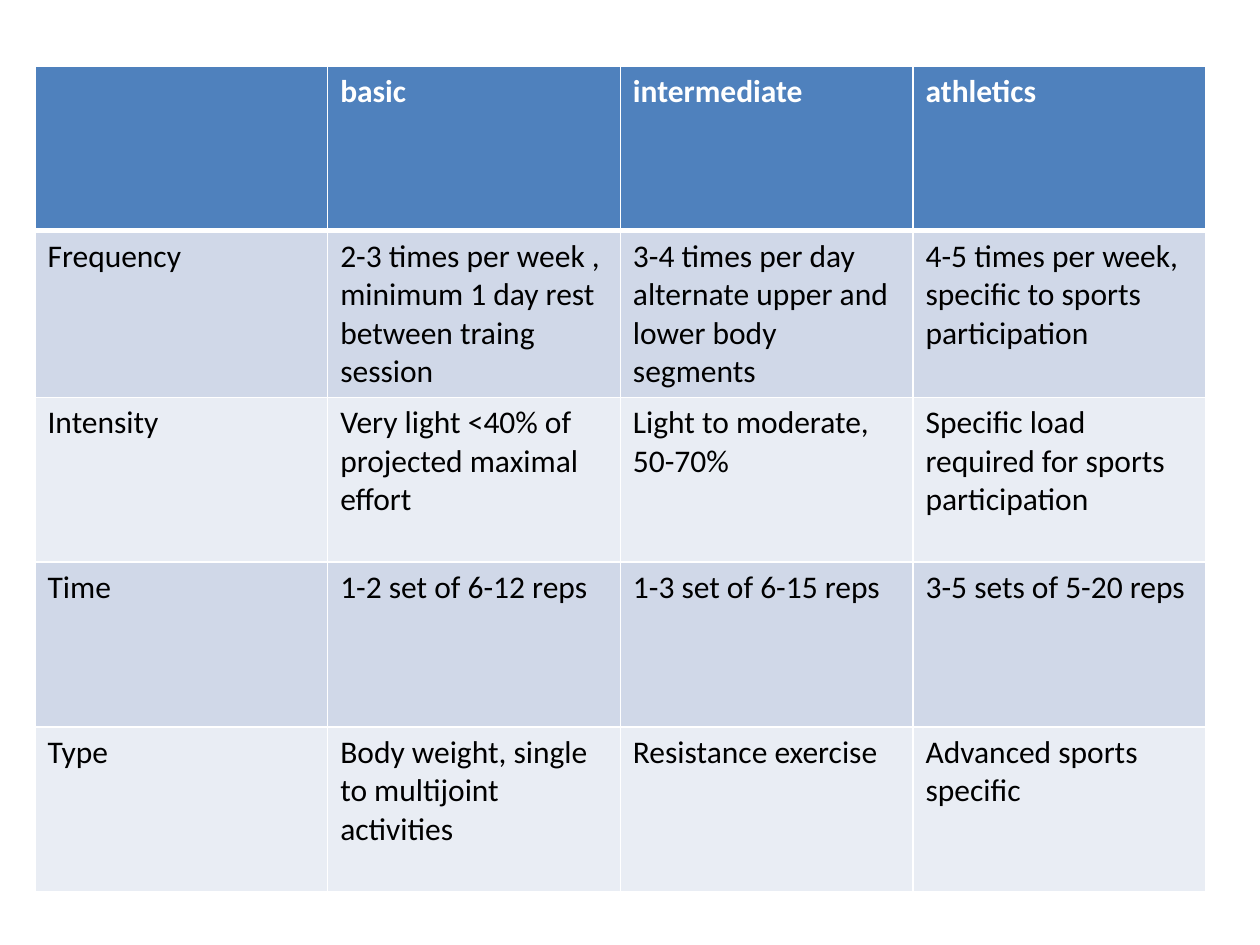
from dataclasses import dataclass

from lxml import etree
from pptx import Presentation
from pptx.dml.color import RGBColor
from pptx.oxml import ns
from pptx.util import Pt


@dataclass(frozen=True)
class Theme:
    font: str = "Calibri"
    size: int = 18
    head: str = "4F81BD"
    bands: tuple = ("D0D8E8", "E9EDF4")
    light: str = "FFFFFF"
    dark: str = "000000"
    thin: int = 1
    thick: int = 3


THEME = Theme()

ROWS = [
    ["", "basic", "intermediate", "athletics"],
    ["Frequency",
     "2-3 times per week , minimum 1 day rest between traing session",
     "3-4 times per day alternate upper and lower body segments",
     "4-5 times per week, specific to sports participation"],
    ["Intensity",
     "Very light <40% of projected maximal effort",
     "Light to moderate, 50-70%",
     "Specific load required for sports participation"],
    ["Time", "1-2 set of 6-12 reps", "1-3 set of 6-15 reps",
     "3-5 sets of 5-20 reps"],
    ["Type", "Body weight, single to multijoint activities",
     "Resistance exercise", "Advanced sports specific"],
]


def add_edge(cell, side, width):
    props = cell._tc.get_or_add_tcPr()
    line = etree.SubElement(props, ns.qn(f"a:ln{side}"), w=str(Pt(width)))
    fill = etree.SubElement(line, ns.qn("a:solidFill"))
    etree.SubElement(fill, ns.qn("a:srgbClr"), val=THEME.light)


def style_cell(cell, row):
    is_head = row == 0
    for side in "LRTB":
        heavy = (row, side) in {(0, "B"), (1, "T")}
        add_edge(cell, side, THEME.thick if heavy else THEME.thin)
    cell.fill.solid()
    shade = THEME.head if is_head else THEME.bands[(row - 1) % 2]
    cell.fill.fore_color.rgb = RGBColor.from_string(shade)
    font = cell.text_frame.paragraphs[0].font
    for run in cell.text_frame.paragraphs[0].runs:
        font = run.font
        font.name = THEME.font
        font.size = Pt(THEME.size)
        font.bold = is_head
        ink = THEME.light if is_head else THEME.dark
        font.color.rgb = RGBColor.from_string(ink)


def add_plan(slide, left, top, width, height):
    frame = slide.shapes.add_table(
        len(ROWS), len(ROWS[0]), Pt(left), Pt(top), Pt(width), Pt(height))
    table = frame.table
    for col in table.columns:
        col.width = Pt(width / len(ROWS[0]))
    for row in table.rows:
        row.height = Pt(height / len(ROWS))
    for r, words in enumerate(ROWS):
        for c, word in enumerate(words):
            cell = table.cell(r, c)
            cell.text_frame.text = word
            style_cell(cell, r)


def main():
    deck = Presentation()
    deck.slide_width, deck.slide_height = Pt(720), Pt(540)
    slide = deck.slides.add_slide(deck.slide_layouts.get_by_name("Blank"))
    add_plan(slide, left=20, top=37.7, width=669, height=471)
    deck.save("out.pptx")


if __name__ == "__main__":
    main()
